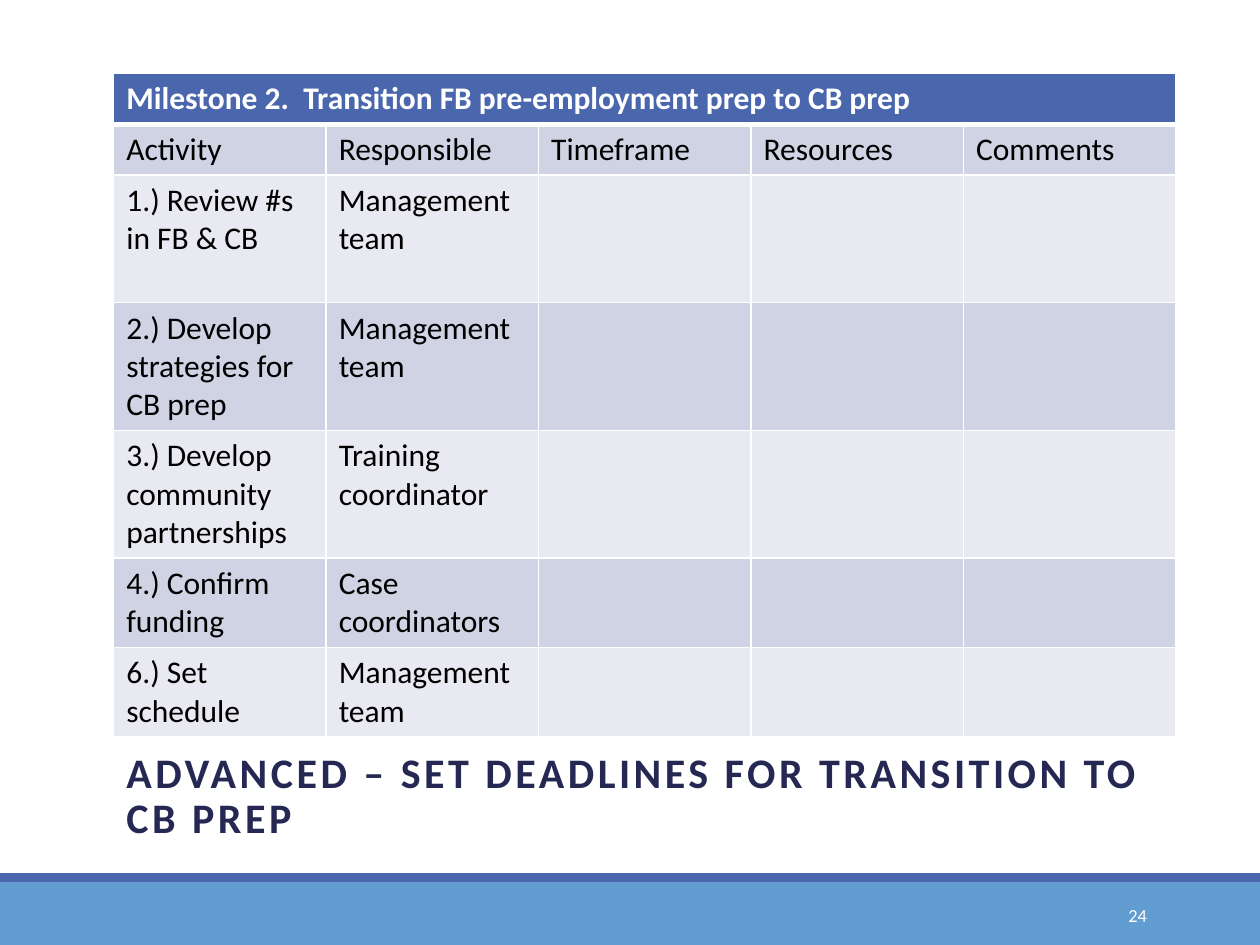
"""Build the milestone planning slide with its activity table."""
from dataclasses import dataclass

from lxml.etree import SubElement
from pptx import Presentation
from pptx.dml.color import RGBColor
from pptx.enum.shapes import MSO_SHAPE
from pptx.enum.text import MSO_ANCHOR, MSO_AUTO_SIZE, PP_ALIGN
from pptx.oxml import parse_xml
from pptx.oxml.ns import nsdecls, qn
from pptx.util import Pt

NAVY, BLUE, SKY = "242852", "4A66AC", "629DD1"
WHITE, BLACK = "FFFFFF", "000000"
BANDS = ("E9EAF1", "D0D3E3")
COLUMN_COUNT = 5
COLUMN_WIDTH = 121.4
TABLE_LEFT, TABLE_TOP = 65, 42


@dataclass
class Bar:
    top: float
    height: float
    color: str


@dataclass
class TableRow:
    height: float
    texts: tuple[str, ...]


BARS = (Bar(504, 36, SKY), Bar(499, 5, BLUE))
ROWS = (
    TableRow(29, ("Milestone 2.  Transition FB pre-employment prep to CB prep",)),
    TableRow(29, ("Activity", "Responsible", "Timeframe", "Resources", "Comments")),
    TableRow(73, ("1.) Review #s in FB & CB", "Management team")),
    TableRow(73, ("2.) Develop strategies for CB prep", "Management team")),
    TableRow(73, ("3.) Develop community partnerships", "Training coordinator")),
    TableRow(51, ("4.) Confirm funding", "Case coordinators")),
    TableRow(51, ("6.) Set schedule", "Management team")),
)


def rgb(color: str) -> RGBColor:
    """Turn a hex string into a colour."""
    return RGBColor.from_string(color)


def write(frame, text: str, *, size: float = 18, color: str = BLACK, bold: bool = False,
          align=PP_ALIGN.LEFT, anchor=MSO_ANCHOR.TOP, tracking: float = 0):
    """Write one formatted paragraph into a text frame and return it."""
    frame.word_wrap = True
    frame.vertical_anchor = anchor
    para = frame.paragraphs[0]
    para.alignment = align
    span = para.add_run()
    span.text = text
    span.font.name = "Calibri"
    span.font.size = Pt(size)
    span.font.bold = bold
    span.font.color.rgb = rgb(color)
    if tracking:
        span.font._element.set("spc", str(int(tracking * 100)))
    return para


def draw_bar(page, bar: Bar, width: int) -> None:
    """Draw a plain bar across the page."""
    box = page.shapes.add_shape(MSO_SHAPE.RECTANGLE, 0, Pt(bar.top), width, Pt(bar.height))
    box.shadow.inherit = False
    box.fill.solid()
    box.fill.fore_color.rgb = rgb(bar.color)
    box.line.fill.background()


def set_borders(cell, top: float, bottom: float) -> None:
    """Give a cell white borders of the given top and bottom widths."""
    properties = cell._tc.get_or_add_tcPr()
    widths = {"lnL": 1, "lnR": 1, "lnT": top, "lnB": bottom}
    for position, (side, width) in enumerate(widths.items()):
        line = parse_xml(f'<a:{side} {nsdecls("a")} w="{Pt(width)}"/>')
        fill = SubElement(line, qn("a:solidFill"))
        SubElement(fill, qn("a:srgbClr"), val=WHITE)
        properties.insert(position, line)


def draw_table(page, rows: tuple[TableRow, ...]) -> None:
    """Draw the banded table under a merged heading row."""
    height = sum(row.height for row in rows)
    table = page.shapes.add_table(
        len(rows), COLUMN_COUNT, Pt(TABLE_LEFT), Pt(TABLE_TOP),
        Pt(COLUMN_COUNT * COLUMN_WIDTH), Pt(height)).table
    for column in table.columns:
        column.width = Pt(COLUMN_WIDTH)
    for row_index, row in enumerate(rows):
        heading = row_index == 0
        table.rows[row_index].height = Pt(row.height)
        for column_index in range(COLUMN_COUNT):
            cell = table.cell(row_index, column_index)
            cell.fill.solid()
            cell.fill.fore_color.rgb = rgb(BLUE if heading else BANDS[row_index % 2])
            set_borders(cell, top=3 if row_index == 1 else 1, bottom=3 if heading else 1)
            if column_index < len(row.texts):
                write(cell.text_frame, row.texts[column_index],
                      color=WHITE if heading else BLACK, bold=heading)
    table.cell(0, 0).merge(table.cell(0, COLUMN_COUNT - 1))


def draw_title(page, text: str) -> None:
    """Place the title below the table."""
    title = page.shapes.title
    title.left, title.top, title.width, title.height = Pt(65), Pt(426), Pt(594), Pt(96)
    title.text_frame.auto_size = MSO_AUTO_SIZE.NONE
    para = write(title.text_frame, text, size=24, color=NAVY, bold=True, tracking=2)
    para.line_spacing = 0.9
    para.space_before, para.space_after = Pt(12), Pt(2)


def main() -> None:
    """Build and save the deck."""
    deck = Presentation()
    deck.slide_width, deck.slide_height = Pt(720), Pt(540)
    page = deck.slides.add_slide(deck.slide_layouts[5])
    for bar in BARS:
        draw_bar(page, bar, deck.slide_width)
    draw_title(page, "ADVANCED – SET DEADLINES FOR TRANSITION TO CB PREP")
    number = page.shapes.add_textbox(Pt(584.5), Pt(508.5), Pt(78), Pt(29))
    write(number.text_frame, "24", size=10.5, color=WHITE,
          align=PP_ALIGN.RIGHT, anchor=MSO_ANCHOR.MIDDLE)
    draw_table(page, ROWS)
    deck.save("out.pptx")


if __name__ == "__main__":
    main()
